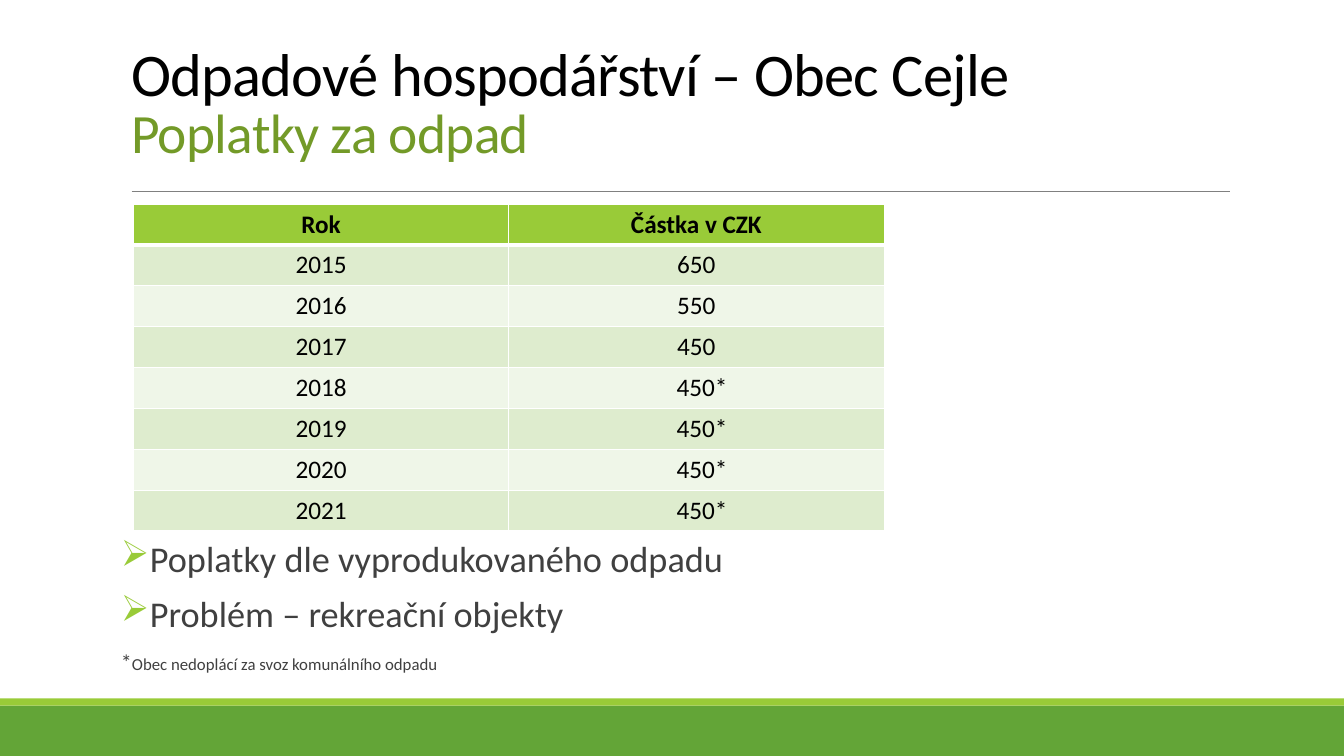
"""Builds a slide on the yearly waste fees of a municipality."""
from lxml import etree
from pptx import Presentation
from pptx.dml.color import RGBColor
from pptx.enum.shapes import MSO_CONNECTOR as Connector, MSO_SHAPE as Shape
from pptx.enum.text import MSO_ANCHOR as Anchor, MSO_AUTO_SIZE as AutoSize, PP_ALIGN as Align
from pptx.oxml.ns import qn
from pptx.util import Cm, Pt

COLORS = {
    "green": "63A537", "lime": "99CB38", "olive": "739A28", "rule": "808080",
    "band_dark": "DEECCE", "band_light": "EFF6E8",
    "black": "000000", "text": "404040", "white": "FFFFFF",
}
FONT = "Calibri"
FEES = [
    ("Rok", "Částka v CZK"),
    ("2015", "650"), ("2016", "550"), ("2017", "450"), ("2018", "450*"),
    ("2019", "450*"), ("2020", "450*"), ("2021", "450*"),
]


def style_font(font, size, color, bold=False):
    font.name, font.size, font.bold = FONT, Pt(size), bold
    font.color.rgb = RGBColor.from_string(COLORS[color])


def add_border(cell, side, width):
    line = etree.SubElement(cell._tc.get_or_add_tcPr(), qn(f"a:ln{side}"), w=str(Pt(width)))
    fill = etree.SubElement(line, qn("a:solidFill"))
    etree.SubElement(fill, qn("a:srgbClr"), val=COLORS["white"])


presentation = Presentation()
presentation.slide_width, presentation.slide_height = Cm(33.87), Cm(19.05)
slide = presentation.slides.add_slide(presentation.slide_layouts[5])

for top, height, color in [(17.78, 1.27, "green"), (17.6, 0.18, "lime")]:
    band = slide.shapes.add_shape(Shape.RECTANGLE, 0, Cm(top), presentation.slide_width, Cm(height))
    band.shadow.inherit = False
    band.fill.solid()
    band.fill.fore_color.rgb = RGBColor.from_string(COLORS[color])
    band.line.fill.background()

rule = slide.shapes.add_connector(Connector.STRAIGHT, Cm(3.32), Cm(4.82), Cm(31), Cm(4.82))
rule.line.color.rgb = RGBColor.from_string(COLORS["rule"])
rule.line.width = Pt(0.5)
etree.SubElement(rule._element.spPr, qn("a:effectLst"))

title = slide.shapes.title
title.left, title.top, title.width, title.height = Cm(3.05), Cm(0.79), Cm(27.94), Cm(3.5)
title_frame = title.text_frame
title_frame.auto_size = AutoSize.NONE
title_frame.vertical_anchor = Anchor.BOTTOM
heading = title_frame.paragraphs[0]
heading.alignment = Align.LEFT
heading.line_spacing = 0.85
for index, (text, size, color) in enumerate([
    ("Odpadové hospodářství – Obec Cejle", 43.2, "black"),
    ("Poplatky za odpad", 39.6, "olive"),
]):
    if index:
        heading.add_line_break()
    run = heading.add_run()
    run.text = text
    style_font(run.font, size, color)
    run.font._element.set("spc", "-50")

table = slide.shapes.add_table(len(FEES), 2, Cm(3.36), Cm(5.14), Cm(18.92), Cm(8.24)).table
for row_index, fees in enumerate(FEES):
    header = row_index == 0
    table.rows[row_index].height = Cm(1.03)
    band_color = "lime" if header else "band_dark" if row_index % 2 else "band_light"
    for column_index, text in enumerate(fees):
        cell = table.cell(row_index, column_index)
        cell.text = text
        if text.endswith("*"):
            cell.margin_left = Cm(0.54)
        paragraph = cell.text_frame.paragraphs[0]
        paragraph.alignment = Align.CENTER
        style_font(paragraph.font, 18, "black", bold=header)
        for side in "LRTB":
            thick = (header and side == "B") or (row_index == 1 and side == "T")
            add_border(cell, side, 3 if thick else 1)
        cell.fill.solid()
        cell.fill.fore_color.rgb = RGBColor.from_string(COLORS[band_color])

notes_box = slide.shapes.add_textbox(Cm(3.05), Cm(13.61), Cm(27.94), Cm(3.6))
notes_frame = notes_box.text_frame
notes_frame.word_wrap = True
notes_frame.margin_left = notes_frame.margin_right = 0
for index, parts in enumerate([
    [("Poplatky dle vyprodukovaného odpadu", 25.9)],
    [("Problém – rekreační objekty", 25.9)],
    [("*", 15.7), ("Obec nedoplácí za svoz komunálního odpadu", 12)],
]):
    paragraph = notes_frame.add_paragraph() if index else notes_frame.paragraphs[0]
    paragraph.line_spacing = 0.8
    paragraph.space_before = Pt(12 if index else 0)
    paragraph.space_after = Pt(2)
    for text, size in parts:
        run = paragraph.add_run()
        run.text = text
        style_font(run.font, size, "text")
    if index < 2:
        properties = paragraph._p.get_or_add_pPr()
        properties.set("marL", str(Cm(0.25)))
        properties.set("indent", str(-Cm(0.25)))
        bullet_color = etree.SubElement(properties, qn("a:buClr"))
        etree.SubElement(bullet_color, qn("a:srgbClr"), val=COLORS["lime"])
        etree.SubElement(properties, qn("a:buChar"), char="➢")

presentation.save("out.pptx")
